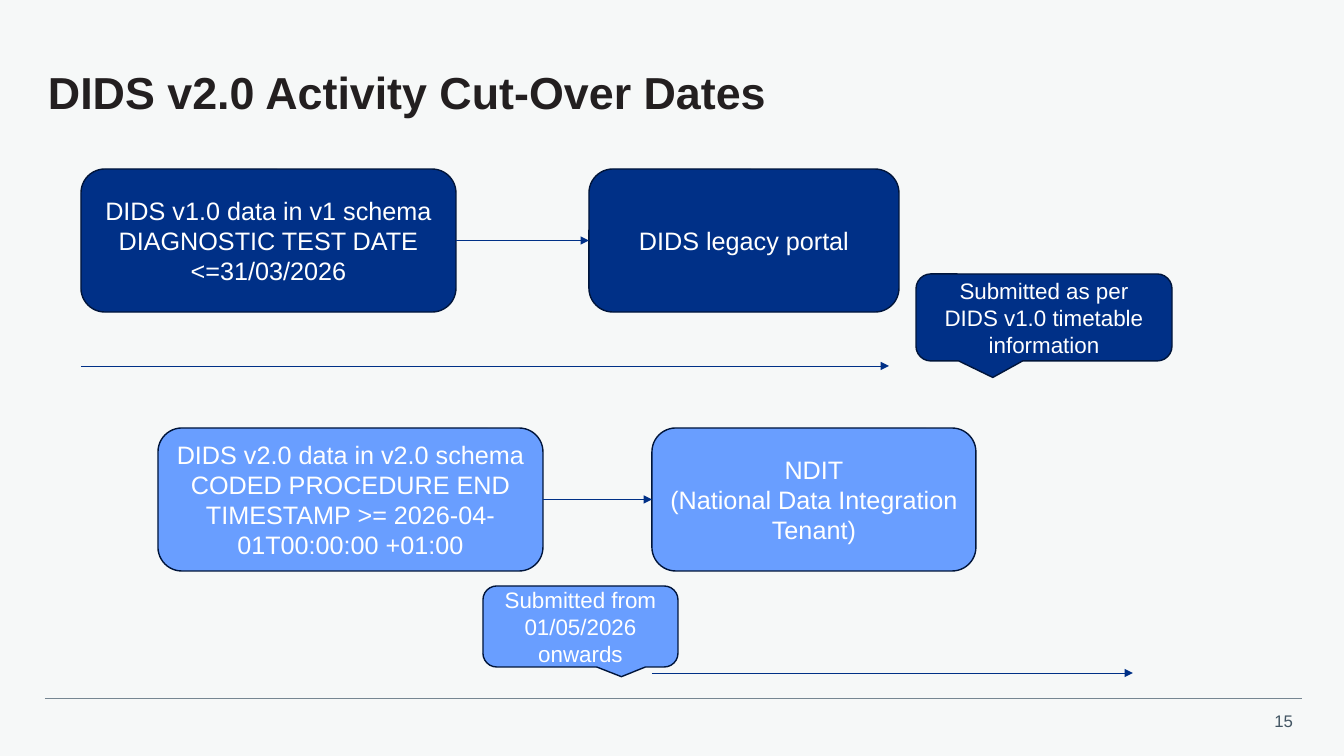
"""Build the DIDS v2.0 activity cut-over dates slide."""
from pptx import Presentation
from pptx.dml.color import RGBColor
from pptx.enum.shapes import MSO_CONNECTOR, MSO_SHAPE as SHAPE
from pptx.enum.text import MSO_ANCHOR as ANCHOR, PP_ALIGN as ALIGN
from pptx.oxml.ns import qn
from pptx.util import Pt
from lxml.etree import SubElement

PX = 12192000 / 1344
COLORS = {
    "background": "F6F8F8", "title": "231F20", "number": "425563",
    "rule": "768692", "navy": "003087", "sky": "699EFF",
    "outline": "00153B", "white": "FFFFFF",
}


def rgb(name):
    return RGBColor.from_string(COLORS[name])


def write(sp, text, size=18, color="white", bold=False, align=ALIGN.CENTER,
          anchor=ANCHOR.MIDDLE, wrap=True):
    tf = sp.text_frame
    tf.word_wrap = wrap
    tf.vertical_anchor = anchor
    tf.text = text
    for p in tf.paragraphs:
        p.alignment = align
        p.font.name = "Arial"
        p.font.size = Pt(size)
        p.font.bold = bold
        p.font.color.rgb = rgb(color)
    return tf


prs = Presentation()
prs.slide_width, prs.slide_height = round(1344 * PX), round(756 * PX)
s = prs.slides.add_slide(prs.slide_layouts[6])
s.background.fill.solid()
s.background.fill.fore_color.rgb = rgb("background")

title = s.shapes.add_textbox(*[round(v * PX) for v in (48, 47, 1257, 96)])
tf = write(title, "DIDS v2.0 Activity Cut-Over Dates", size=32, color="title",
           bold=True, align=ALIGN.LEFT)
tf.margin_left = tf.margin_right = tf.margin_top = tf.margin_bottom = 0
tf.paragraphs[0].line_spacing = 0.9
tf.paragraphs[0].space_after = Pt(6)

number = s.shapes.add_textbox(*[round(v * PX) for v in (1262, 706, 41, 30)])
write(number, "15", size=12, color="number", align=ALIGN.RIGHT,
      anchor=ANCHOR.TOP, wrap=False)

BOX, CALLOUT = SHAPE.ROUNDED_RECTANGLE, SHAPE.ROUNDED_RECTANGULAR_CALLOUT
SHAPES = [
    ("v1 data", BOX, (81, 169, 375, 143), "navy", 18, (),
     "DIDS v1.0 data in v1 schema\nDIAGNOSTIC TEST DATE <=31/03/2026"),
    ("v1 portal", BOX, (589, 169, 310, 143), "navy", 18, (),
     "DIDS legacy portal"),
    ("v2 data", BOX, (158, 428, 385, 143), "sky", 18, (),
     "DIDS v2.0 data in v2.0 schema\n"
     "CODED PROCEDURE END TIMESTAMP >= 2026-04-01T00:00:00 +01:00"),
    ("v2 portal", BOX, (652, 428, 324, 143), "sky", 18, (),
     "NDIT\n(National Data Integration Tenant)"),
    ("v1 note", CALLOUT, (916, 274, 256, 87), "navy", 16, (-0.2, 0.69, 0.17),
     "Submitted as per DIDS v1.0 timetable information"),
    ("v2 note", CALLOUT, (483, 586, 195, 81), "sky", 16, (0.21, 0.62, 0.17),
     "Submitted from\n01/05/2026 onwards"),
]
boxes = {}
for key, kind, place, fill, size, adjustments, text in SHAPES:
    sp = s.shapes.add_shape(kind, *[round(v * PX) for v in place])
    sp.shadow.inherit = False
    sp.fill.solid()
    sp.fill.fore_color.rgb = rgb(fill)
    sp.line.color.rgb = rgb("outline")
    sp.line.width = Pt(1)
    for i, value in enumerate(adjustments):
        sp.adjustments[i] = value
    write(sp, text, size=size)
    boxes[key] = sp

LINES = [
    ((45, 698, 1302, 698), "rule", 0.5, None),
    ((81, 366, 889, 366), "navy", 0.5, None),
    ((652, 673, 1133, 673), "navy", 0.5, None),
    ((456, 241, 589, 241), "navy", 1, ("v1 data", "v1 portal")),
    ((543, 500, 652, 500), "navy", 1, ("v2 data", "v2 portal")),
]
for ends, color, width, joined in LINES:
    line = s.shapes.add_connector(MSO_CONNECTOR.STRAIGHT,
                                  *[round(v * PX) for v in ends])
    line.line.color.rgb = rgb(color)
    line.line.width = Pt(width)
    if joined:
        line.begin_connect(boxes[joined[0]], 3)
        line.end_connect(boxes[joined[1]], 1)
    if color == "navy":
        ln = line._element.spPr.find(qn("a:ln"))
        SubElement(ln, qn("a:tailEnd"), type="triangle")
    SubElement(line._element.spPr, qn("a:effectLst"))

prs.save("out.pptx")
